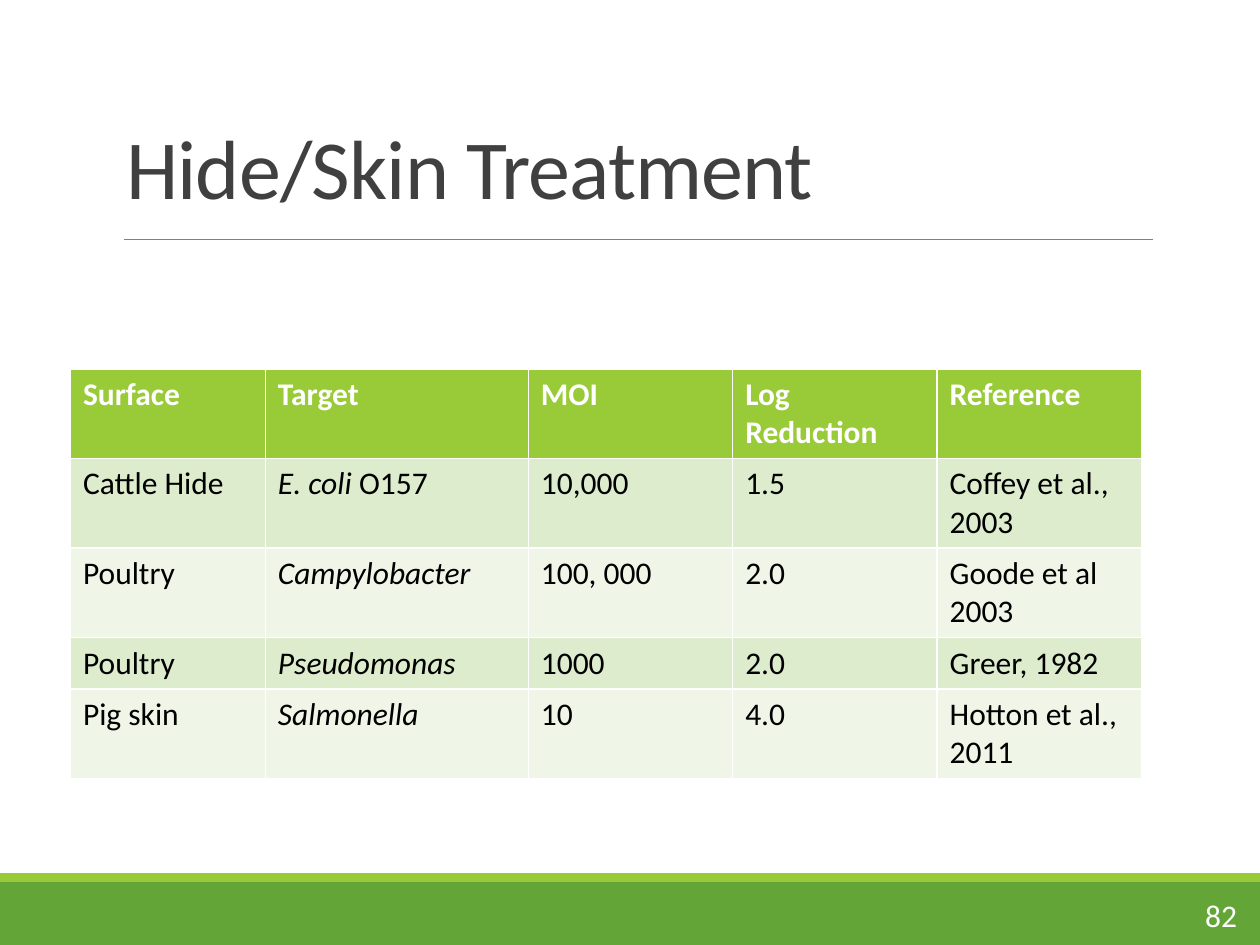
from lxml.etree import SubElement
from pptx import Presentation
from pptx.dml.color import RGBColor
from pptx.enum.shapes import MSO_CONNECTOR, MSO_SHAPE
from pptx.enum.text import MSO_ANCHOR, PP_ALIGN
from pptx.oxml.ns import qn
from pptx.util import Cm, Pt

COLORS = {
    "green": "63A537", "lime": "99CB38", "rule": "808080", "title": "404040",
    "band_dark": "DEECCE", "band_light": "EFF6E8",
    "white": "FFFFFF", "black": "000000",
}


def rgb(name):
    return RGBColor.from_string(COLORS[name])


def set_font(font, size, color, bold=False):
    font.name = "Calibri"
    font.size = Pt(size)
    font.bold = bold
    font.color.rgb = rgb(color)


prs = Presentation()
prs.slide_width, prs.slide_height = Cm(25.4), Cm(19.05)
s = prs.slides.add_slide(prs.slide_layouts[5])

# Footer bands
for top, height, color in [(17.78, 1.27, "green"), (17.6, 0.18, "lime")]:
    sp = s.shapes.add_shape(MSO_SHAPE.RECTANGLE, 0, Cm(top), prs.slide_width, Cm(height))
    sp.shadow.inherit = False
    sp.fill.solid()
    sp.fill.fore_color.rgb = rgb(color)
    sp.line.fill.background()

# Rule under the title
line = s.shapes.add_connector(MSO_CONNECTOR.STRAIGHT, Cm(2.49), Cm(4.83), Cm(23.24), Cm(4.83))
line.line.color.rgb = rgb("rule")
line.line.width = Pt(0.5)
SubElement(line._element.spPr, qn("a:effectLst"))

# Title
title = s.shapes.title
title.left, title.top, title.width, title.height = Cm(2.29), Cm(2.16), Cm(20.96), Cm(2.34)
tf = title.text_frame
tf.text = "Hide/Skin Treatment"
tf.vertical_anchor = MSO_ANCHOR.BOTTOM
p = tf.paragraphs[0]
p.alignment = PP_ALIGN.LEFT
p.line_spacing = 0.85
set_font(p.font, 48, "title")
p.runs[0].font._element.set("spc", "-50")

# Table: the Target column is italic, apart from the strain number
rows = [
    ["Surface", "Target", "MOI", "Log Reduction", "Reference"],
    ["Cattle Hide", "E. coli O157", "10,000", "1.5", "Coffey et al., 2003"],
    ["Poultry", "Campylobacter", "100, 000", "2.0", "Goode et al 2003"],
    ["Poultry", "Pseudomonas", "1000", "2.0", "Greer, 1982"],
    ["Pig skin", "Salmonella", "10", "4.0", "Hotton et al., 2011"],
]
widths = [3.93, 5.3, 4.12, 4.12, 4.12]
STRAIN = "O157"

frame = s.shapes.add_table(len(rows), len(widths), Cm(1.42), Cm(7.44), Cm(sum(widths)), Cm(5.15))
table = frame.table
for column, width in zip(table.columns, widths):
    column.width = Cm(width)

for i, row in enumerate(rows):
    header = i == 0
    fill = "lime" if header else "band_dark" if i % 2 else "band_light"
    for j, text in enumerate(row):
        cell = table.cell(i, j)
        cell.fill.solid()
        cell.fill.fore_color.rgb = rgb(fill)
        p = cell.text_frame.paragraphs[0]
        set_font(p.font, 18, "white" if header else "black", bold=header)
        species, strain, _ = text.partition(STRAIN)
        for part in filter(None, [species, strain]):
            r = p.add_run()
            r.text = part
            r.font.italic = j == 1 and not header and part != STRAIN

# Slide number
number = s.shapes.add_textbox(Cm(22.45), Cm(17.93), Cm(2.74), Cm(1.02))
tf = number.text_frame
tf.word_wrap = True
tf.vertical_anchor = MSO_ANCHOR.MIDDLE
tf.text = "82"
p = tf.paragraphs[0]
p.alignment = PP_ALIGN.RIGHT
set_font(p.font, 18, "white")

prs.save("out.pptx")
